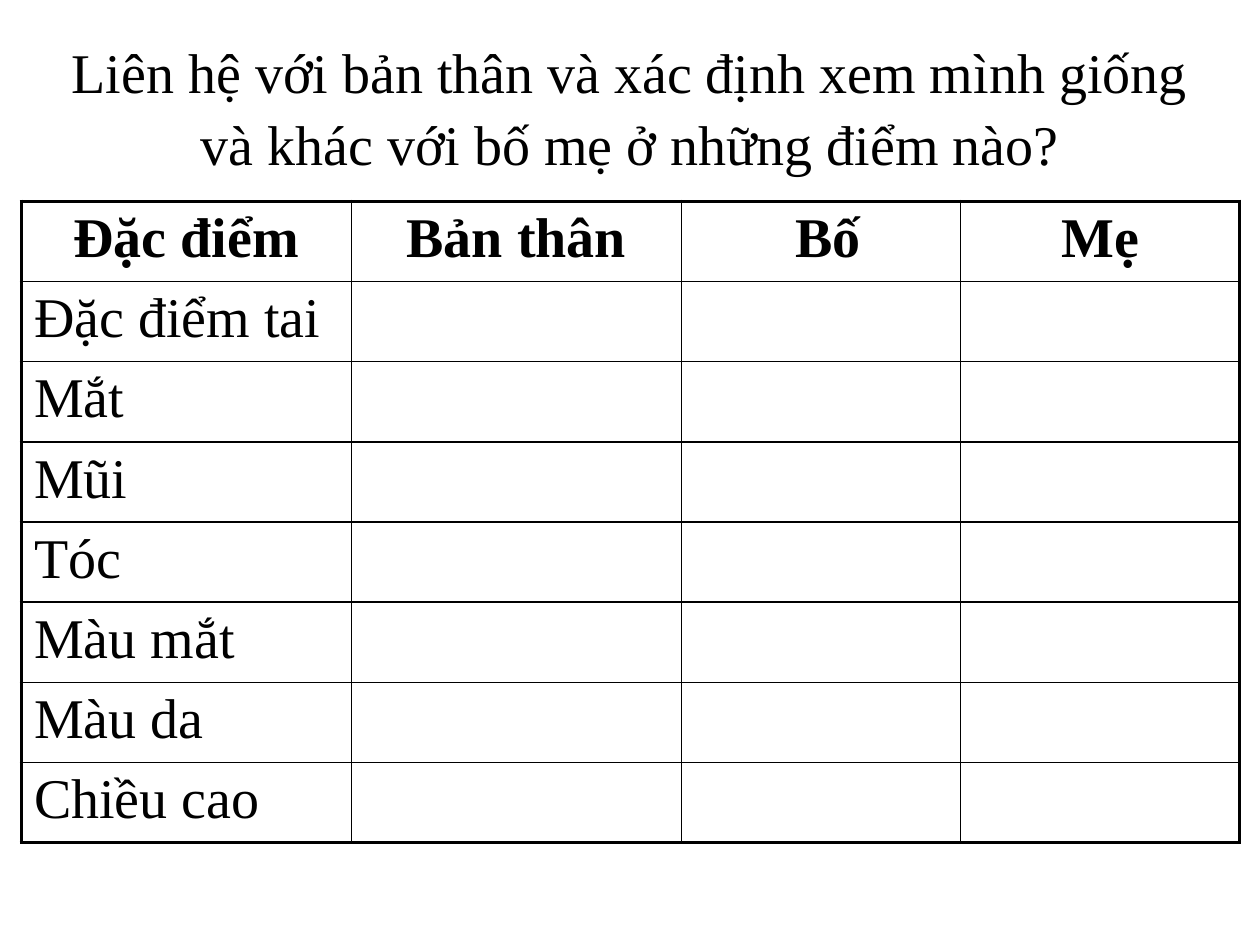
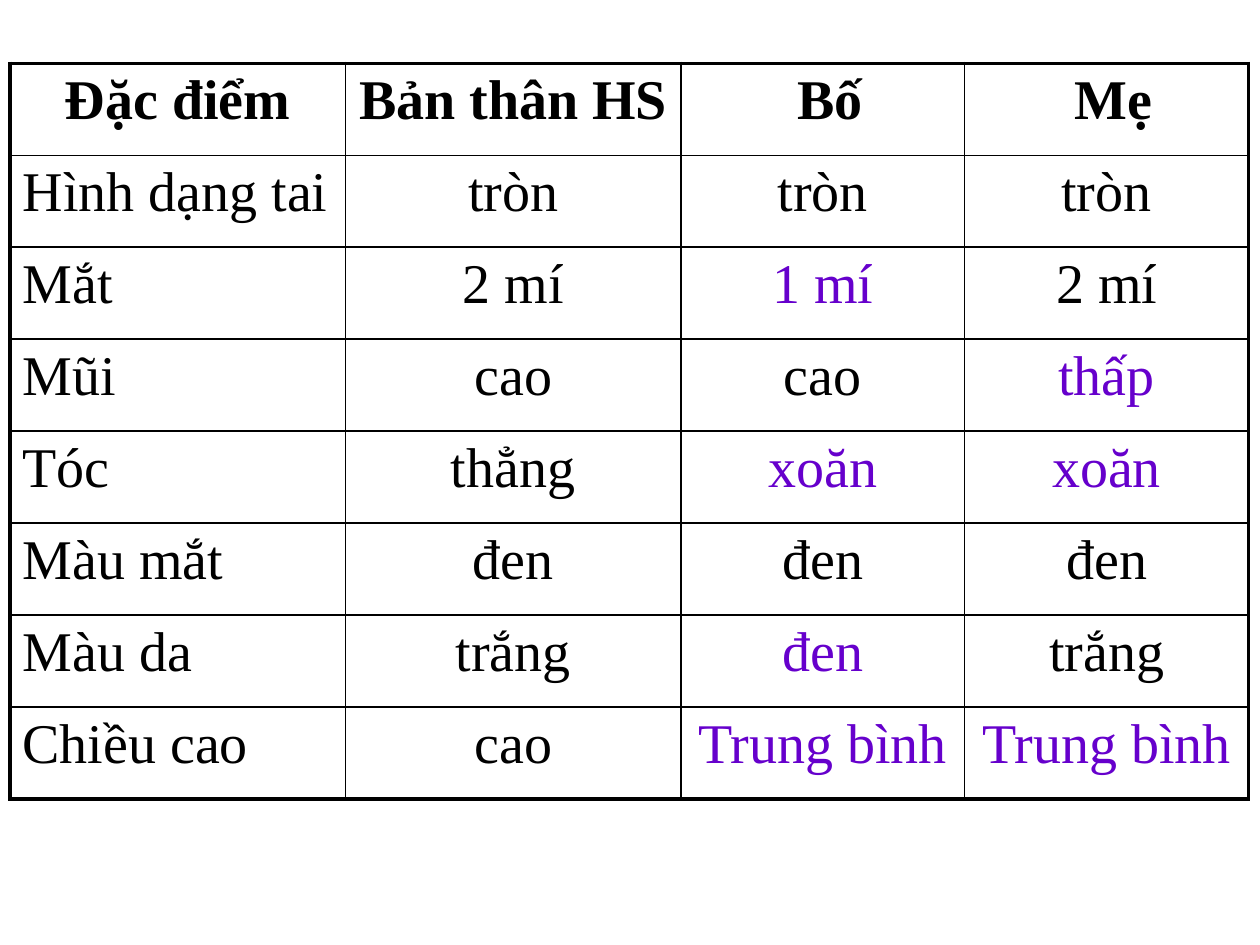
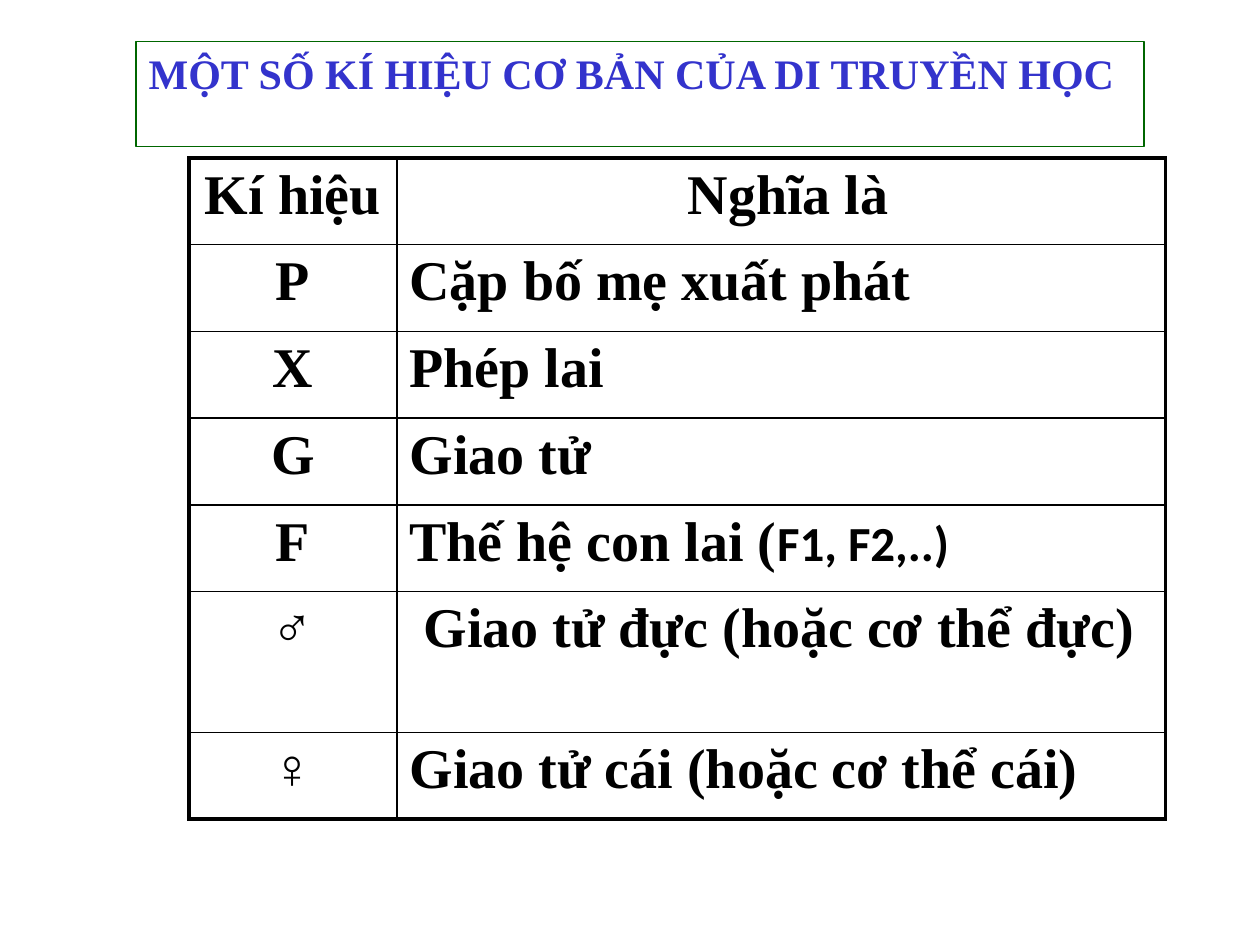
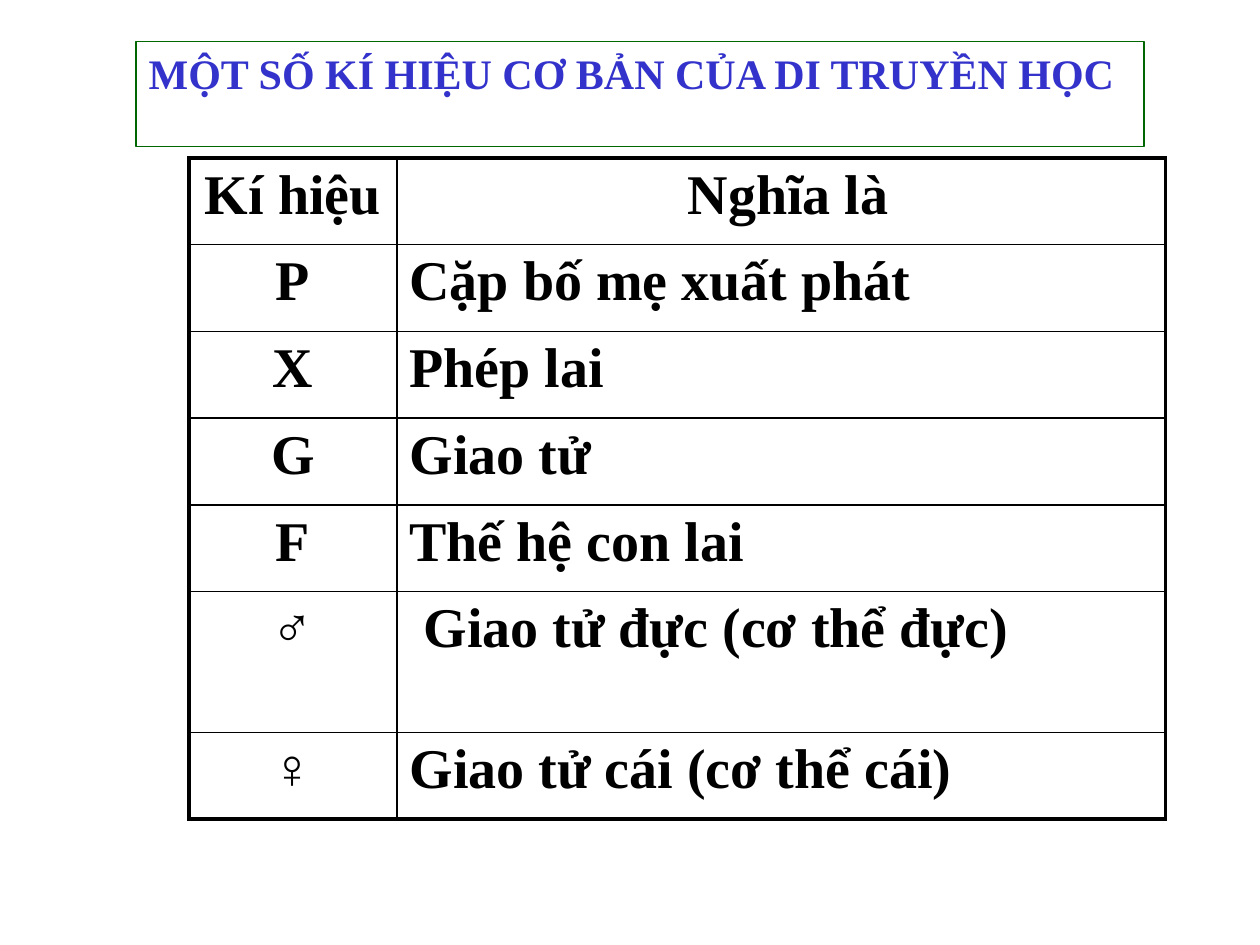
from dataclasses import dataclass
from typing import NamedTuple

import pptx
import pptx.dml.color
import pptx.enum.text
import pptx.oxml.ns
import pptx.util
from lxml import etree

SLIDE_WIDTH, SLIDE_HEIGHT = pptx.util.Inches(10), pptx.util.Inches(7.5)
BLACK, PURPLE, BLUE, GREEN = "000000", "6600CC", "3333CC", "006600"
SERIF, SANS = "Times New Roman", "Calibri"
OUTER_LINE, INNER_LINE = 2.25, 1
TITLE_ONLY, BLANK = 5, 6
LEFT, CENTER = pptx.enum.text.PP_ALIGN.LEFT, pptx.enum.text.PP_ALIGN.CENTER


class Area(NamedTuple):
    """Left, top, width and height as shares of the slide."""
    left: float
    top: float
    width: float
    height: float


class Span(NamedTuple):
    text: str
    size: float = 32
    font: str = SERIF


@dataclass(frozen=True)
class Heading:
    text: str
    area: Area
    size: float = 32
    color: str = BLACK
    bold: bool = False
    align: int = CENTER
    line_spacing: float = 1
    space_before: int = 0
    outline: str | None = None


@dataclass(frozen=True)
class Grid:
    """A ruled table; column and row sizes are relative weights."""
    area: Area
    columns: tuple[float, ...]
    rows: tuple[float, ...]
    cells: list[tuple]
    left_column: int
    bold_body: bool = False
    mark_differences: bool = False


@dataclass(frozen=True)
class Page:
    grid: Grid
    heading: Heading | None = None


FEATURES = ("Mắt", "Mũi", "Tóc", "Màu mắt", "Màu da", "Chiều cao")
FAMILY_COLUMNS = (13, 13, 11, 11)
FAMILY_ROWS = (1,) * 8
FAMILY_TRAITS = [
    ("2 mí", "1 mí", "2 mí"),
    ("cao", "cao", "thấp"),
    ("thẳng", "xoăn", "xoăn"),
    ("đen", "đen", "đen"),
    ("trắng", "đen", "trắng"),
    ("cao", "Trung bình", "Trung bình"),
]

QUESTION = Heading(
    "Liên hệ với bản thân và xác định xem mình giống và khác với bố mẹ ở những điểm nào?",
    Area(0.025, 0.028, 0.95, 0.167), line_spacing=1.07)
SYMBOLS_HEADING = Heading(
    "MỘT SỐ KÍ HIỆU CƠ BẢN CỦA DI TRUYỀN HỌC", Area(0.108, 0.044, 0.8, 0.068),
    size=24, color=BLUE, bold=True, align=LEFT, space_before=50, outline=GREEN)


def symbols_page(offspring: tuple[Span, ...] | str, male: str, female: str) -> Page:
    cells = [
        ("Kí hiệu", " Nghĩa là"),
        ("P", "Cặp bố mẹ xuất phát"),
        ("X", "Phép lai"),
        ("G", "Giao tử"),
        ("F", offspring),
        ("♂", f" Giao tử đực ({male})"),
        ("♀", f"Giao tử cái ({female})"),
    ]
    grid = Grid(Area(0.15, 0.167, 0.775, 0.7), (1.65, 6.1),
                (0.69, 0.69, 0.69, 0.69, 0.69, 1.12, 0.69), cells,
                left_column=1, bold_body=True)
    return Page(grid, SYMBOLS_HEADING)


PAGES = [
    Page(Grid(Area(0.017, 0.213, 0.967, 0.679), FAMILY_COLUMNS, FAMILY_ROWS,
              [("Đặc điểm", "Bản thân", " Bố", "Mẹ"),
               *((feature, "", "", "") for feature in ("Đặc điểm tai", *FEATURES))],
              left_column=0), QUESTION),
    Page(Grid(Area(0.008, 0.067, 0.983, 0.779), FAMILY_COLUMNS, FAMILY_ROWS,
              [("Đặc điểm", "Bản thân HS", " Bố", " Mẹ"),
               ("Hình dạng tai", "tròn", "tròn", "tròn"),
               *((feature, *traits) for feature, traits in zip(FEATURES, FAMILY_TRAITS))],
              left_column=0, mark_differences=True)),
    symbols_page((Span("Thế hệ con lai ("), Span("F1, F2,..)", 28, SANS)),
                 "hoặc cơ thể đực", "hoặc cơ thể cái"),
    symbols_page("Thế hệ con lai", "cơ thể đực", "cơ thể cái"),
]


def rgb(value: str) -> pptx.dml.color.RGBColor:
    return pptx.dml.color.RGBColor.from_string(value)


def apply_format(target, values: dict) -> None:
    for attribute, value in values.items():
        setattr(target, attribute, value)


def placed(area: Area) -> dict:
    return {"left": int(area.left * SLIDE_WIDTH), "top": int(area.top * SLIDE_HEIGHT),
            "width": int(area.width * SLIDE_WIDTH), "height": int(area.height * SLIDE_HEIGHT)}


def add_element(parent, tag: str, **attributes: str):
    return etree.SubElement(parent, pptx.oxml.ns.qn(tag), **attributes)


def write(paragraph, spans: tuple[Span, ...], color: str, bold: bool,
          align: int, space_before: int) -> None:
    """Fill a paragraph; space_before is a percentage of the line."""
    spacing = add_element(paragraph._p.get_or_add_pPr(), "a:spcBef")
    add_element(spacing, "a:spcPct", val=str(space_before * 1000))
    paragraph.alignment = align
    for span in spans:
        run = paragraph.add_run()
        run.text = span.text
        apply_format(run.font, {"name": span.font, "size": pptx.util.Pt(span.size), "bold": bold})
        run.font.color.rgb = rgb(color)


def draw_heading(slide, heading: Heading) -> None:
    title = slide.shapes.title
    apply_format(title, placed(heading.area))
    apply_format(title.text_frame, {
        "word_wrap": True,
        "vertical_anchor": pptx.enum.text.MSO_ANCHOR.TOP,
        "auto_size": pptx.enum.text.MSO_AUTO_SIZE.SHAPE_TO_FIT_TEXT,
    })
    paragraph = title.text_frame.paragraphs[0]
    write(paragraph, (Span(heading.text, heading.size),), heading.color, heading.bold,
          heading.align, heading.space_before)
    paragraph.line_spacing = heading.line_spacing
    if heading.outline:
        title.line.color.rgb = rgb(heading.outline)
        title.line.width = pptx.util.Pt(0.75)


def rule_cell(cell, outer_sides: dict[str, bool]) -> None:
    """Draw the four borders, heavier on the table's outer sides."""
    properties = cell._tc.get_or_add_tcPr()
    for side, is_outer in outer_sides.items():
        width = pptx.util.Pt(OUTER_LINE if is_outer else INNER_LINE)
        border = add_element(properties, f"a:ln{side}", w=str(int(width)))
        add_element(add_element(border, "a:solidFill"), "a:srgbClr", val=BLACK)


def draw_grid(slide, grid: Grid) -> None:
    last_row, last_column = len(grid.rows) - 1, len(grid.columns) - 1
    position = placed(grid.area)
    table = slide.shapes.add_table(len(grid.rows), len(grid.columns), **position).table
    apply_format(table, {"first_row": False, "horz_banding": False})
    for column, weight in zip(table.columns, grid.columns):
        column.width = int(position["width"] * weight / sum(grid.columns))
    for row, weight in zip(table.rows, grid.rows):
        row.height = int(position["height"] * weight / sum(grid.rows))

    for r, values in enumerate(grid.cells):
        for c, content in enumerate(values):
            cell = table.cell(r, c)
            rule_cell(cell, {"L": c == 0, "R": c == last_column, "T": r == 0, "B": r == last_row})
            cell.fill.background()
            if not content:
                continue
            is_header = r == 0
            differs = grid.mark_differences and not is_header and c > 1 and content != values[1]
            spans = (Span(content),) if isinstance(content, str) else content
            write(cell.text_frame.paragraphs[0], spans,
                  color=PURPLE if differs else BLACK,
                  bold=is_header or grid.bold_body,
                  align=LEFT if c == grid.left_column and not is_header else CENTER,
                  space_before=20)


def main() -> None:
    deck = pptx.Presentation()
    apply_format(deck, {"slide_width": SLIDE_WIDTH, "slide_height": SLIDE_HEIGHT})
    for page in PAGES:
        layout = deck.slide_layouts[TITLE_ONLY if page.heading else BLANK]
        slide = deck.slides.add_slide(layout)
        if page.heading:
            draw_heading(slide, page.heading)
        draw_grid(slide, page.grid)
    deck.save("out.pptx")


if __name__ == "__main__":
    main()
